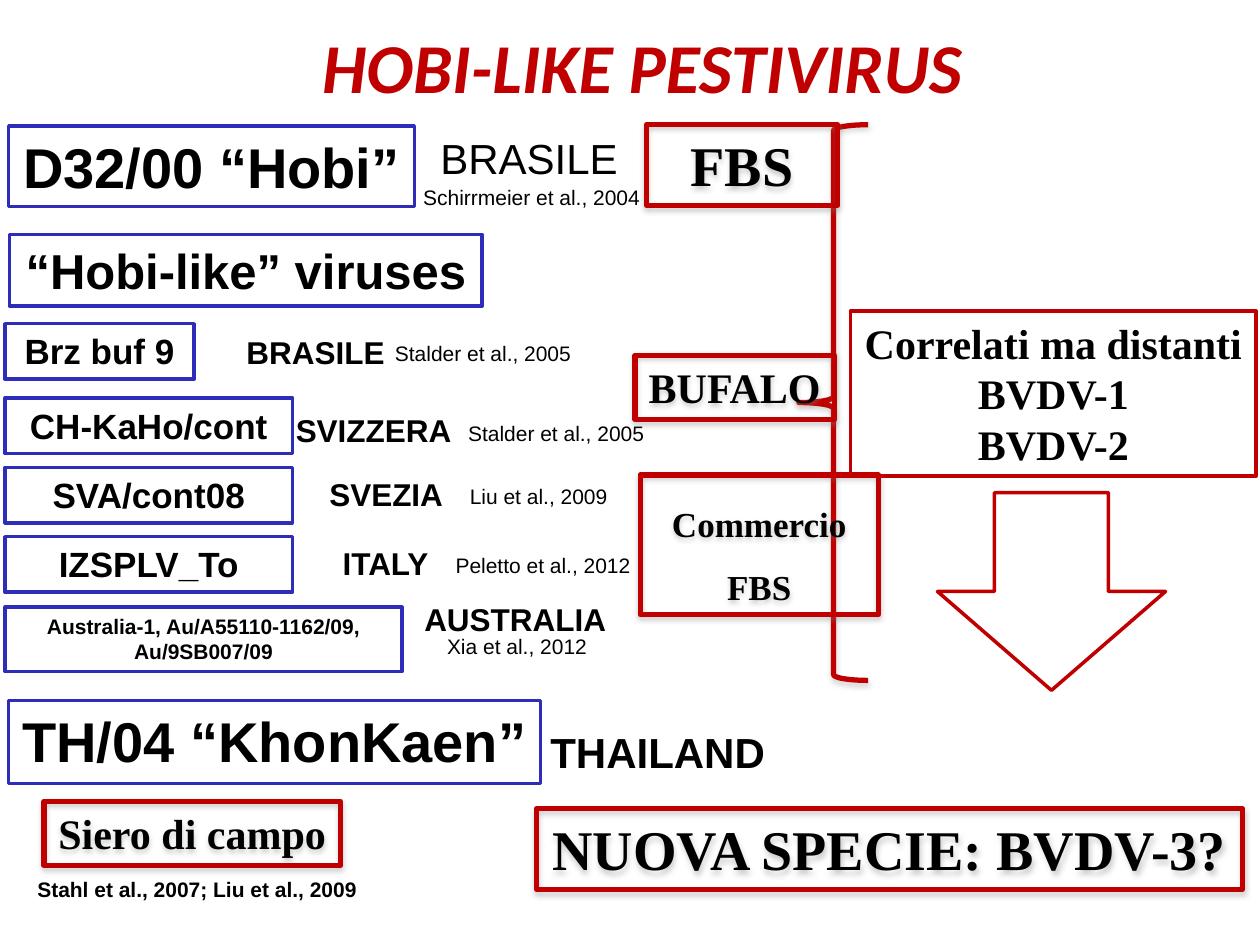
import pptx
import pptx.util
import pptx.dml.color
import pptx.enum.shapes
import pptx.enum.text
import pptx.oxml
import pptx.oxml.ns

Pt = pptx.util.Pt
SHAPE = pptx.enum.shapes.MSO_SHAPE
COLORS = {"red": "C00000", "blue": "2D2DB9", "white": "FFFFFF", "black": "000000", "shadow": "808080"}


def write(sp, text, size, font="Arial", bold=True, wrap=False, color="black", italic=False, spacing=None):
    tf = sp.text_frame
    tf.text = text
    tf.word_wrap = wrap
    tf.auto_size = pptx.enum.text.MSO_AUTO_SIZE.SHAPE_TO_FIT_TEXT
    tf.vertical_anchor = pptx.enum.text.MSO_ANCHOR.TOP
    for p in tf.paragraphs:
        p.alignment = pptx.enum.text.PP_ALIGN.CENTER
        p.line_spacing = spacing
        for r in p.runs:
            r.font.name = font
            r.font.size = Pt(size)
            r.font.bold = bold
            r.font.italic = italic
            r.font.color.rgb = pptx.dml.color.RGBColor.from_string(COLORS[color])


def outline(kind, box, line, width, fill=None, shadow=None):
    sp = s.shapes.add_shape(kind, *map(Pt, box))
    sp.shadow.inherit = False
    sp.line.color.rgb = pptx.dml.color.RGBColor.from_string(COLORS[line])
    sp.line.width = Pt(width)
    if fill:
        sp.fill.solid()
        sp.fill.fore_color.rgb = pptx.dml.color.RGBColor.from_string(COLORS[fill])
    else:
        sp.fill.background()
    if shadow:
        alpha, dist = shadow
        effects = sp._element.spPr.find(pptx.oxml.ns.qn("a:effectLst"))
        effects.append(pptx.oxml.parse_xml(
            f'<a:outerShdw {pptx.oxml.ns.nsdecls("a")} blurRad="{Pt(3.1)}" dist="{Pt(dist)}" '
            f'dir="5400000" rotWithShape="0"><a:srgbClr val="{COLORS["shadow"]}">'
            f'<a:alpha val="{alpha * 1000}"/></a:srgbClr></a:outerShdw>'))
    return sp


prs = pptx.Presentation()
prs.slide_width = Pt(720)
prs.slide_height = Pt(540)
s = prs.slides.add_slide(prs.slide_layouts[6])

title = s.shapes.add_textbox(Pt(175), Pt(10), Pt(383.8), Pt(55.4))
write(title, "HOBI-LIKE PESTIVIRUS", 40, font="Calibri", color="red", italic=True)

labels = [
    ("BRASILE", 244, 72, 116.6, 36.7, 24, False),
    ("Schirrmeier et al., 2004", 234, 102.2, 139.7, 21.6, 12, False),
    ("BRASILE", 133.2, 186.5, 94.3, 28.8, 18, True),
    ("Stalder et al., 2005", 216, 190.8, 120.2, 21.6, 12, False),
    ("SVIZZERA", 161.3, 231.1, 104.4, 28.8, 18, True),
    ("Stalder et al., 2005", 257.8, 236.9, 120.2, 21.6, 12, False),
    ("SVEZIA", 180.7, 267.8, 79.9, 28.8, 18, True),
    ("Liu et al., 2009", 259.2, 272.9, 97.2, 21.6, 12, False),
    ("ITALY", 187.9, 307.4, 64.8, 28.8, 18, True),
    ("Peletto et al., 2012", 250.6, 312.5, 119.5, 21.6, 12, False),
    ("AUSTRALIA", 234.7, 339.1, 119.5, 28.8, 18, True),
    ("Xia et al., 2012", 246.2, 358.6, 98.6, 21.6, 12, False),
    ("THAILAND", 306.7, 411.8, 138.2, 36.7, 24, True),
    ("Stahl et al., 2007; Liu et al., 2009", 13, 497.5, 199.4, 21.6, 12, True),
]
for text, x, y, w, h, size, bold in labels:
    write(s.shapes.add_textbox(Pt(x), Pt(y), Pt(w), Pt(h)), text, size, bold=bold)

strains = [
    ("D32/00 “Hobi”", (5, 72, 231.8, 46.1), 32, False),
    ("“Hobi-like” viruses", (5.5, 134, 270, 41), 28, False),
    ("Brz buf 9", (2.9, 185, 108, 31.7), 20, True),
    ("Australia-1, Au/A55110-1162/09,\nAu/9SB007/09", (2.9, 347, 226.8, 36.7), 12, True),
    ("TH/04 “KhonKaen”", (5, 400.3, 303.8, 47.5), 32, False),
]
for i, name in enumerate(["CH-KaHo/cont", "SVA/cont08", "IZSPLV_To"]):
    strains.append((name, (2.9, 227.5 + 39.6 * i, 164.2, 31.7), 20, True))
for text, box, size, wrap in strains:
    write(outline(SHAPE.RECTANGLE, box, "blue", 2, "white"), text, size, wrap=wrap)

brace = outline(SHAPE.LEFT_BRACE, (456.5, 71.3, 39.6, 317.5), "red", 3, shadow=(35, 1.8))
brace.adjustments[0] = 0.083
brace.adjustments[1] = 0.5

related = outline(SHAPE.RECTANGLE, (486, 177.8, 231.8, 94.3), "red", 2, "white")
write(related, "Correlati ma distanti\nBVDV-1\nBVDV-2", 24, font="Times New Roman")
outline(SHAPE.DOWN_ARROW, (535.7, 281.5, 130.3, 113), "red", 2)

sources = [
    ("FBS", (369.4, 71.3, 109.4, 46.1), 32, True, None),
    ("BUFALO", (362.9, 203, 113.8, 36.7), 24, False, None),
    ("Commercio\nFBS", (365.8, 271.4, 136.1, 79.9), 20, True, 1.5),
    ("Siero di campo", (25.2, 457.9, 169.2, 36.7), 24, False, None),
    ("NUOVA SPECIE: BVDV-3?", (306.7, 462.2, 403.2, 46.1), 32, False, None),
]
for text, box, size, wrap, spacing in sources:
    sp = outline(SHAPE.RECTANGLE, box, "red", 3, shadow=(38, 1.6))
    write(sp, text, size, font="Times New Roman", wrap=wrap, spacing=spacing)

prs.save("out.pptx")
